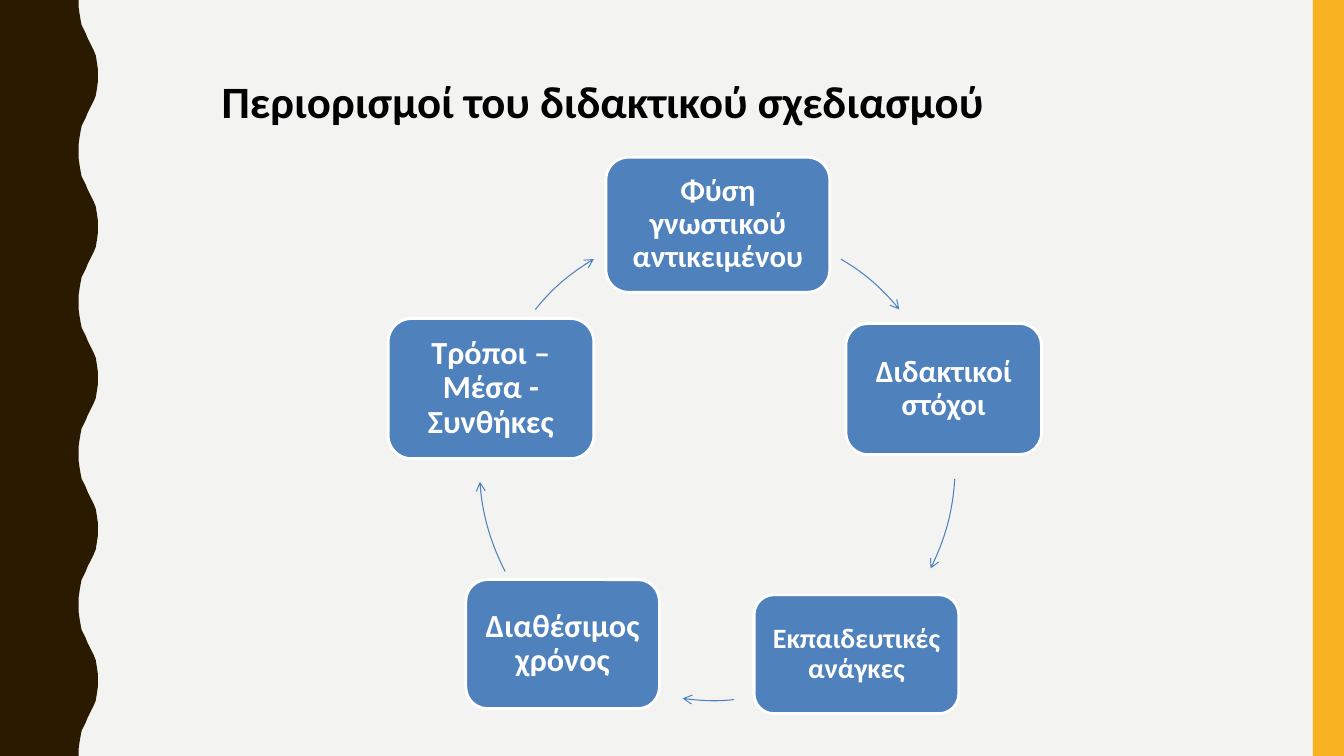
"""Build the slide on the limits of instructional design as a five-step cycle."""
from lxml.etree import SubElement
from pptx import Presentation
from pptx.dml.color import RGBColor
from pptx.enum.shapes import MSO_SHAPE as Preset
from pptx.enum.text import MSO_ANCHOR as Anchor, MSO_AUTO_SIZE as AutoSize, PP_ALIGN as Align
from pptx.oxml.ns import qn
from pptx.util import Inches, Pt

TITLE = "Περιορισμοί του διδακτικού σχεδιασμού"
STEPS = [
    ("Φύση γνωστικού αντικειμένου", (6.01, 1.56, 2.22, 1.34), 22, 0.09),
    ("Διδακτικοί στόχοι", (8.39, 3.21, 1.94, 1.3), 22, 0.09),
    ("Εκπαιδευτικές ανάγκες", (7.48, 5.9, 2.03, 1.18), 20, 0.08),
    ("Διαθέσιμος χρόνος", (4.62, 5.75, 1.92, 1.28), 23, 0.1),
    ("Τρόποι – Μέσα - Συνθήκες", (3.85, 3.16, 2.04, 1.39), 23, 0.1),
]
RING_SIZE = 4.72
ARROWS = [
    ((4.76, 2.22), [(8.34, 2.57), (8.56, 2.7), (8.76, 2.87), (8.92, 3.07)]),
    ((4.76, 2.22), [(9.47, 4.75), (9.45, 5.06), (9.37, 5.36), (9.23, 5.64)]),
    ((4.72, 2.23), [(7.28, 6.94), (7.11, 6.96), (6.94, 6.95), (6.77, 6.93)]),
    ((4.76, 2.25), [(5.01, 5.67), (4.87, 5.39), (4.78, 5.09), (4.76, 4.78)]),
    ((4.76, 2.22), [(5.31, 3.07), (5.47, 2.87), (5.67, 2.7), (5.89, 2.57)]),
]
HALF_WAVE = [
    (0.78, 0), (0.78, 0.07), (0.79, 0.14), (0.8, 0.2), (0.81, 0.25), (0.83, 0.29),
    (0.85, 0.33), (0.87, 0.38), (0.89, 0.42), (0.91, 0.46), (0.93, 0.5),
    (0.95, 0.55), (0.96, 0.61), (0.97, 0.68), (0.97, 0.75),
]
WIDTH, HEIGHT = 13.33, 7.5
WAVE_COUNT = 5
WAVE_HEIGHT = HEIGHT / WAVE_COUNT

PAPER = RGBColor(0xF3, 0xF3, 0xF2)
BROWN = RGBColor(0x2A, 0x1A, 0x00)
AMBER = RGBColor(0xF8, 0xB3, 0x23)
BLUE = RGBColor(0x4F, 0x81, 0xBD)
WHITE = RGBColor(0xFF, 0xFF, 0xFF)
BLACK = RGBColor(0x00, 0x00, 0x00)


def paint(shape, fill=None, line=None, width=0):
    shape.shadow.inherit = False
    for part, color in ((shape.fill, fill), (shape.line.fill, line)):
        if color is None:
            part.background()
        else:
            part.solid()
            part.fore_color.rgb = color
    if line is not None:
        shape.line.width = Pt(width)


def write(shape, text, size, color, frame_format, paragraph_format):
    frame = shape.text_frame
    for name, value in frame_format.items():
        setattr(frame, name, value)
    paragraph = frame.paragraphs[0]
    for name, value in paragraph_format.items():
        setattr(paragraph, name, value)
    run = paragraph.add_run()
    run.text = text
    for name, value in {"name": "Calibri", "size": Pt(size), "bold": True}.items():
        setattr(run.font, name, value)
    run.font.color.rgb = color


def add_outline(shapes, points, close):
    start, *others = [(Inches(x), Inches(y)) for x, y in points]
    builder = shapes.build_freeform(*start)
    builder.add_line_segments(others, close=close)
    return builder.convert_to_shape()


def wave_edge():
    wave = HALF_WAVE + [(x, WAVE_HEIGHT - y) for x, y in HALF_WAVE[-2:0:-1]]
    edge = [(x, y + WAVE_HEIGHT * index) for index in range(WAVE_COUNT) for x, y in wave]
    return [(0, 0), *edge, (HALF_WAVE[0][0], HEIGHT), (0, HEIGHT)]


def add_step(shapes, text, box, size, inset):
    card = shapes.add_shape(Preset.ROUNDED_RECTANGLE, *map(Inches, box))
    paint(card, BLUE, WHITE, 2)
    margins = {f"margin_{side}": Inches(inset) for side in ("left", "top", "right", "bottom")}
    write(card, text, size, WHITE,
          {"word_wrap": True, "vertical_anchor": Anchor.MIDDLE, **margins},
          {"alignment": Align.CENTER, "line_spacing": 0.9})


def add_arrow(shapes, corner, controls):
    arrow = add_outline(shapes, controls, False)
    left, top = corner
    frame = {"left": left, "top": top, "width": RING_SIZE, "height": RING_SIZE}
    for name, value in frame.items():
        setattr(arrow, name, Inches(value))
    curve = next(arrow._element.iter(qn("a:path")))
    for segment in list(curve):
        curve.remove(segment)
    for name in ("w", "h"):
        curve.set(name, str(Inches(RING_SIZE)))
    for tag, points in (("a:moveTo", controls[:1]), ("a:cubicBezTo", controls[1:])):
        segment = SubElement(curve, qn(tag))
        for x, y in points:
            SubElement(segment, qn("a:pt"), x=str(Inches(x - left)), y=str(Inches(y - top)))
    paint(arrow, None, BLUE, 0.75)
    SubElement(arrow.line.fill._xPr, qn("a:tailEnd"), type="arrow")


def main():
    presentation = Presentation()
    presentation.slide_width, presentation.slide_height = Inches(WIDTH), Inches(HEIGHT)
    slide = presentation.slides.add_slide(presentation.slide_layouts[6])
    slide.background.fill.solid()
    slide.background.fill.fore_color.rgb = PAPER
    shapes = slide.shapes

    paint(add_outline(shapes, wave_edge(), True), BROWN)
    stripe = shapes.add_shape(Preset.RECTANGLE, *map(Inches, (13.02, 0, 0.31, HEIGHT)))
    paint(stripe, AMBER)
    title = shapes.add_textbox(*map(Inches, (2.1, 0.68, 10.97, 0.64)))
    write(title, TITLE, 32, BLACK,
          {"word_wrap": True, "auto_size": AutoSize.SHAPE_TO_FIT_TEXT}, {})
    for step, arrow in zip(STEPS, ARROWS):
        add_step(shapes, *step)
        add_arrow(shapes, *arrow)

    presentation.save("out.pptx")


if __name__ == "__main__":
    main()
